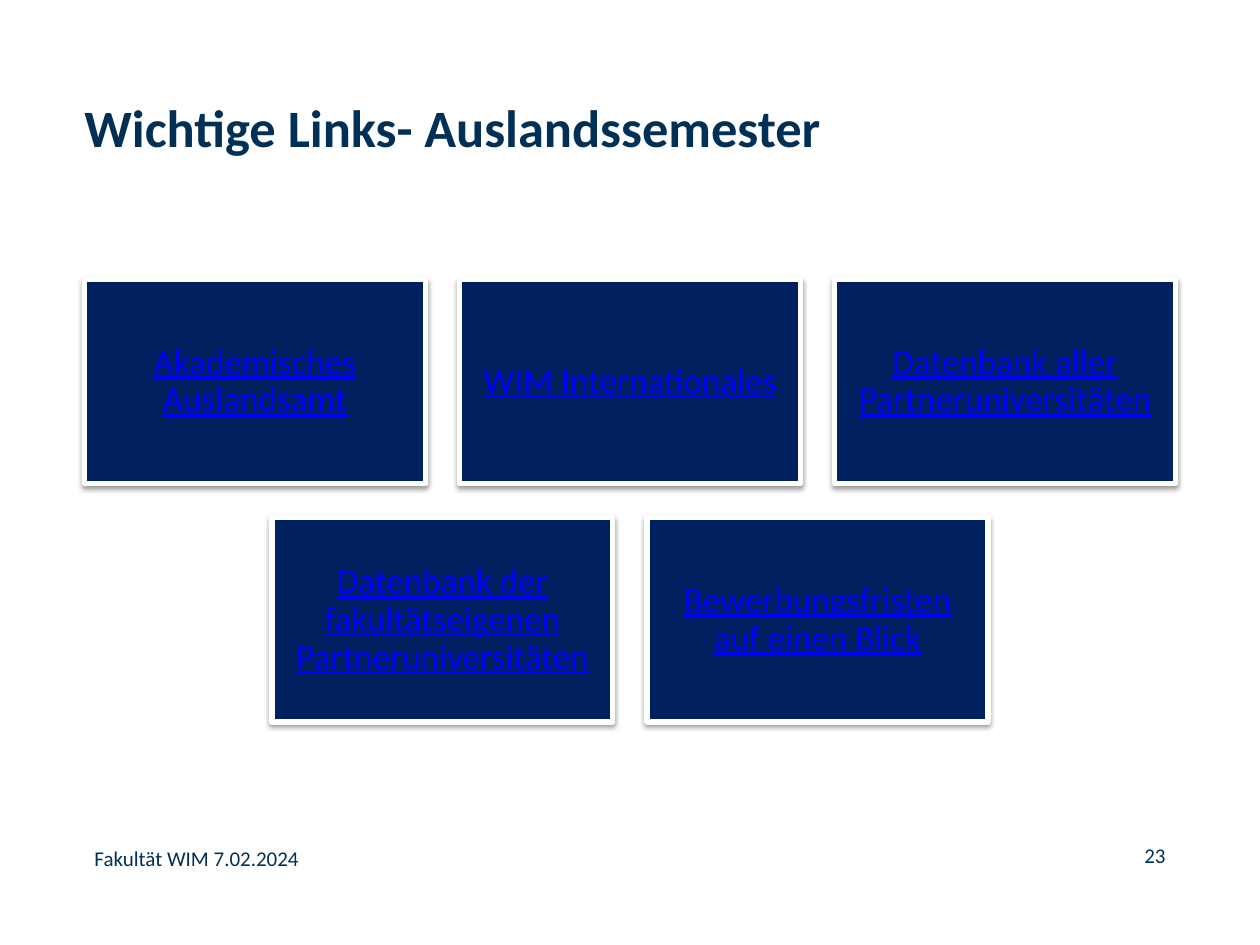
from lxml import etree
from pptx import Presentation
from pptx.dml.color import RGBColor
from pptx.enum.shapes import MSO_SHAPE
from pptx.enum.text import MSO_ANCHOR, PP_ALIGN
from pptx.oxml import parse_xml
from pptx.util import Inches, Pt

RECT = MSO_SHAPE.RECTANGLE
TOP, MIDDLE = MSO_ANCHOR.TOP, MSO_ANCHOR.MIDDLE
LEFT, CENTER, RIGHT = PP_ALIGN.LEFT, PP_ALIGN.CENTER, PP_ALIGN.RIGHT

INK = RGBColor(0x00, 0x30, 0x56)
NAVY = RGBColor(0x00, 0x20, 0x60)
LINK = RGBColor(0x00, 0x00, 0xFF)
WHITE = RGBColor(0xFF, 0xFF, 0xFF)

W, H = Inches(10), Inches(7.5)
TITLE = {"size": Pt(30), "bold": True}
FOOTER = {"size": Pt(12)}
CARD = {"size": Pt(20), "underline": True}
CARD_ROWS = [
    ["Akademisches Auslandsamt", "WIM Internationales",
     "Datenbank aller Partneruniversitäten"],
    ["Datenbank der fakultätseigenen Partneruniversitäten",
     "Bewerbungsfristen auf einen Blick"],
]
SHADOW = (
    '<a:effectLst xmlns:a="http://schemas.openxmlformats.org/drawingml/2006/main">'
    '<a:outerShdw blurRad="39370" dist="20320" dir="5400000" rotWithShape="0">'
    '<a:srgbClr val="000000"><a:alpha val="38000"/></a:srgbClr>'
    '</a:outerShdw></a:effectLst>'
)


def share(x, y, w, h):
    """Turn shares of the slide into a box of whole lengths."""
    return int(x * W), int(y * H), int(w * W), int(h * H)


def write(sp, text, fmt, color=INK, align=LEFT, anchor=TOP, inset=0, spacing=1.0):
    """Put one formatted paragraph into a shape."""
    tf = sp.text_frame
    frame = {"word_wrap": True, "vertical_anchor": anchor}
    frame.update((f"margin_{side}", inset) for side in ("left", "top", "right", "bottom"))
    for name, value in frame.items():
        setattr(tf, name, value)
    p = tf.paragraphs[0]
    p.alignment, p.line_spacing = align, spacing
    r = p.add_run()
    r.text = text
    for name, value in {"name": "Calibri", **fmt}.items():
        setattr(r.font, name, value)
    r.font.color.rgb = color


def add_title(s, box):
    """Place the slide title."""
    write(s.shapes.add_textbox(*box), "Wichtige Links- Auslandssemester", TITLE)


def add_card(s, box, text):
    """Place one framed link card with a soft shadow."""
    sp = s.shapes.add_shape(RECT, *box)
    sp.fill.solid()
    sp.fill.fore_color.rgb = NAVY
    sp.line.color.rgb = WHITE
    sp.line.width = Pt(3)
    sp.shadow.inherit = False
    props = sp.fill._xPr
    props.replace(props.find("{*}effectLst"), parse_xml(SHADOW))
    write(sp, text, CARD, LINK, CENTER, MIDDLE, Inches(0.08), 0.9)


def add_cards(s, box, rows):
    """Lay out the cards in centred rows with equal gaps."""
    x, y, w, h = box
    cols = max(map(len, rows))
    card_w = w / (cols + 0.1 * (cols - 1))
    gap = 0.1 * card_w
    card_h = (h - gap * (len(rows) - 1)) / len(rows)
    for i, row in enumerate(rows):
        row_w = len(row) * (card_w + gap) - gap
        for j, text in enumerate(row):
            left = x + (w - row_w) / 2 + j * (card_w + gap)
            top = y + i * (card_h + gap)
            add_card(s, (int(left), int(top), int(card_w), int(card_h)), text)


def add_footer(s, box):
    """Place the footer text on the left and the page number on the right."""
    x, y, w, h = box
    left = s.shapes.add_textbox(x, y, int(w * 0.37), h)
    write(left, "Fakultät WIM 7.02.2024", FOOTER)
    num_w = int(w * 0.14)
    right = s.shapes.add_textbox(x + w - num_w, y, num_w, h)
    write(right, "23", FOOTER, align=RIGHT, spacing=0.9)


def main():
    """Build and save the slide."""
    prs = Presentation()
    prs.slide_width, prs.slide_height = W, H
    s = prs.slides.add_slide(prs.slide_layouts[6])
    add_title(s, share(0.067, 0.101, 0.6, 0.148))
    add_cards(s, share(0.067, 0.296, 0.866, 0.468), CARD_ROWS)
    add_footer(s, share(0.075, 0.895, 0.85, 0.027))
    prs.save("out.pptx")


if __name__ == "__main__":
    main()
